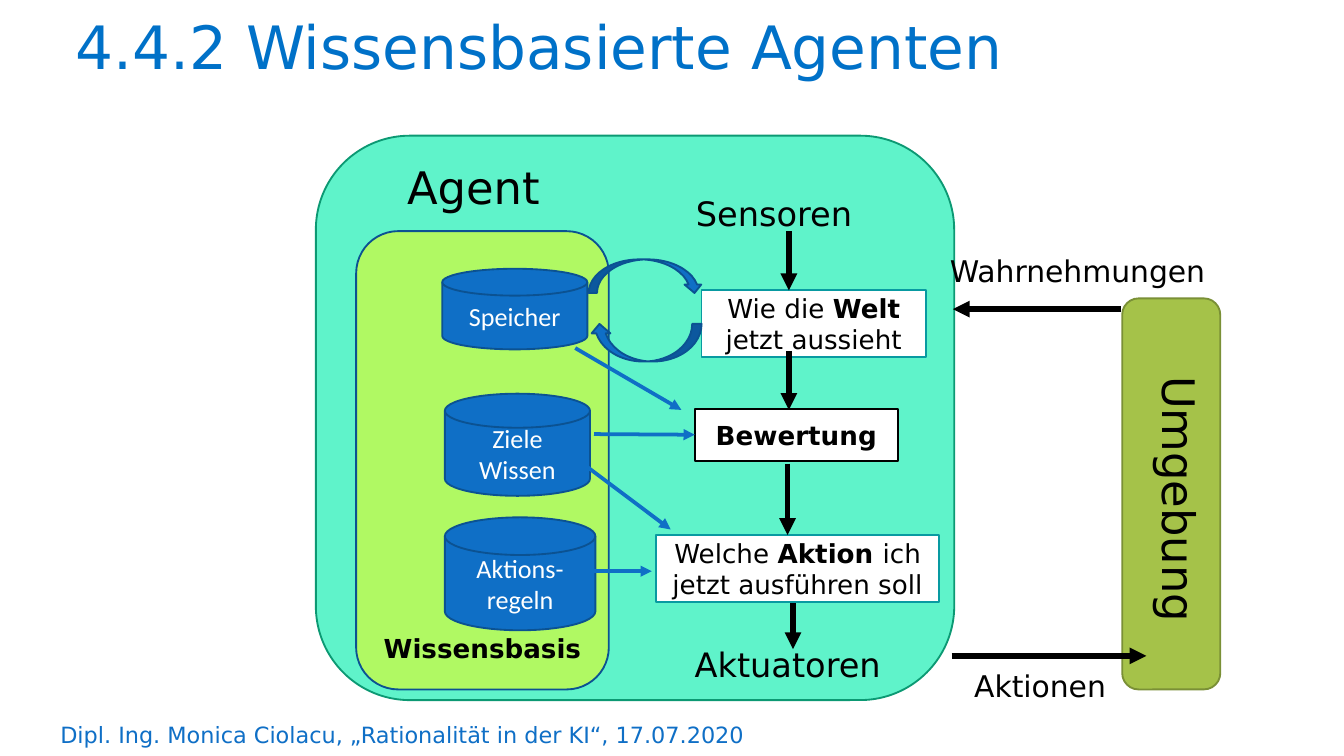
from dataclasses import dataclass

from lxml import etree
from pptx import Presentation
from pptx.dml.color import RGBColor
from pptx.enum.shapes import MSO_CONNECTOR, MSO_SHAPE
from pptx.enum.text import MSO_ANCHOR, PP_ALIGN
from pptx.oxml.ns import qn
from pptx.util import Emu, Pt

PX = 9144  # 100 px to the inch
SLIDE_WIDTH = 1000

STRAIGHT = MSO_CONNECTOR.STRAIGHT
RECT = MSO_SHAPE.RECTANGLE
ROUND = MSO_SHAPE.ROUNDED_RECTANGLE
DISK = MSO_SHAPE.FLOWCHART_MAGNETIC_DISK
CURVED = MSO_SHAPE.CURVED_DOWN_ARROW
CENTER = PP_ALIGN.CENTER
MIDDLE = MSO_ANCHOR.MIDDLE
BOTTOM = MSO_ANCHOR.BOTTOM
LEFT_SIDE = 1

BLACK = RGBColor(0x00, 0x00, 0x00)
WHITE = RGBColor(0xFF, 0xFF, 0xFF)
TITLE_BLUE = RGBColor(0x00, 0x71, 0xC8)
BLUE = RGBColor(0x0F, 0x6F, 0xC6)
DARK_BLUE = RGBColor(0x0B, 0x52, 0x92)
MINT = RGBColor(0x5F, 0xF3, 0xCA)
DARK_MINT = RGBColor(0x0C, 0x99, 0x73)
YELLOW = RGBColor(0xFF, 0xFF, 0x00)
OLIVE = RGBColor(0xA5, 0xC2, 0x49)
DARK_OLIVE = RGBColor(0x7A, 0x90, 0x36)
TEAL = RGBColor(0x08, 0x9A, 0xA1)

SANS = "DejaVu Sans"
DISK_FONT = "Calibri"


@dataclass(frozen=True)
class Node:
    """A filled shape; words between asterisks are bold."""
    box: tuple[int, int, int, int]
    kind: int
    fill: RGBColor
    line: RGBColor
    text: str = ""
    color: RGBColor = BLACK
    font: str = SANS
    anchor: MSO_ANCHOR = MIDDLE
    rotation: int = 0
    opacity: int = 100


@dataclass(frozen=True)
class Label:
    box: tuple[int, int, int, int]
    text: str
    size: int
    color: RGBColor = BLACK
    wrap: bool = True
    vertical: bool = False


@dataclass(frozen=True)
class Arrow:
    start: tuple[int, int]
    end: tuple[int, int]
    color: RGBColor = BLACK
    width: int = 3


def disk(box: tuple[int, int, int, int], text: str) -> Node:
    return Node(box, DISK, BLUE, DARK_BLUE, text, WHITE, DISK_FONT)


def curved(box: tuple[int, int, int, int], rotation: int) -> Node:
    return Node(box, CURVED, BLUE, DARK_BLUE, rotation=rotation)


KNOWLEDGE = Node((265, 172, 188, 341), ROUND, YELLOW, DARK_BLUE,
                 "*Wissensbasis*", anchor=BOTTOM, opacity=51)
RATING = Node((517, 304, 151, 39), RECT, WHITE, BLACK, "*Bewertung*")

NODES = [
    Node((235, 101, 475, 420), ROUND, MINT, DARK_MINT),
    KNOWLEDGE,
    Node((835, 222, 73, 291), ROUND, OLIVE, DARK_OLIVE),
    Node((522, 216, 167, 50), RECT, WHITE, TEAL, "Wie die *Welt* jetzt aussieht"),
    Node((488, 398, 211, 50), RECT, WHITE, TEAL,
         "Welche *Aktion *ich jetzt ausführen soll"),
    RATING,
    disk((329, 200, 108, 60), "Speicher"),
    disk((331, 293, 108, 76), "Ziele Wissen"),
    disk((331, 385, 112, 84), "Aktions-regeln"),
    curved((438, 193, 85, 25), 0),
    curved((439, 241, 83, 28), 180),
]

TITLE = Label((49, 9, 897, 69), "4.4.2 Wissensbasierte Agenten", 32, TITLE_BLUE)
LABELS = [
    Label((35, 532, 615, 30),
          "Dipl. Ing. Monica Ciolacu, „Rationalität in der KI“, 17.07.2020", 12, BLUE),
    Label((293, 114, 142, 50), "Agent", 24),
    Label((508, 139, 167, 40), "Sensoren", 18),
    Label((507, 474, 211, 40), "Aktuatoren", 18),
    Label((697, 183, 217, 37), "Wahrnehmungen", 16),
    Label((715, 492, 119, 37), "Aktionen", 16, wrap=False),
    Label((842, 270, 61, 193), "Umgebung", 24, wrap=False, vertical=True),
]

GOALS_TO_RATING = Arrow((442, 323), (517, 323), BLUE, 2)
ARROWS = [
    Arrow((587, 172), (587, 216)),
    Arrow((587, 261), (587, 305)),
    Arrow((586, 345), (586, 398)),
    Arrow((590, 449), (590, 483)),
    Arrow((834, 230), (709, 230)),
    Arrow((708, 488), (853, 488)),
    Arrow((428, 259), (507, 305), BLUE, 2),
    Arrow((435, 346), (499, 394), BLUE, 2),
    Arrow((442, 425), (485, 425), BLUE, 2),
]


def px(*lengths: int) -> list[Emu]:
    return [Emu(n * PX) for n in lengths]


def add_node(slide, node: Node):
    sp = slide.shapes.add_shape(node.kind, *px(*node.box))
    sp.shadow.inherit = False
    sp.rotation = node.rotation
    sp.fill.solid()
    sp.fill.fore_color.rgb = node.fill
    if node.opacity < 100:
        color = sp._element.spPr.find(qn("a:solidFill"))[0]
        etree.SubElement(color, qn("a:alpha"), val=str(node.opacity * 1000))
    sp.line.color.rgb = node.line
    sp.line.width = Pt(1)
    if node.text:
        tf = sp.text_frame
        tf.word_wrap = True
        tf.vertical_anchor = node.anchor
        p = tf.paragraphs[0]
        p.alignment = CENTER
        for i, part in enumerate(node.text.split("*")):
            if part:
                r = p.add_run()
                r.text = part
                r.font.name = node.font
                r.font.size = Pt(14)
                r.font.bold = i % 2 == 1
                r.font.color.rgb = node.color
    return sp


def add_label(slide, label: Label):
    sp = slide.shapes.add_textbox(*px(*label.box))
    tf = sp.text_frame
    tf.word_wrap = label.wrap
    if label.vertical:
        tf._txBody.bodyPr.set("vert", "vert")
    tf.text = label.text
    font = tf.paragraphs[0].runs[0].font
    font.name = SANS
    font.size = Pt(label.size)
    font.color.rgb = label.color
    return sp


def add_arrow(slide, arrow: Arrow):
    line = slide.shapes.add_connector(STRAIGHT, *px(*arrow.start, *arrow.end))
    line.line.color.rgb = arrow.color
    line.line.width = Pt(arrow.width)
    etree.SubElement(line.line._get_or_add_ln(), qn("a:tailEnd"), type="triangle")
    etree.SubElement(line._element.spPr, qn("a:effectLst"))
    return line


def main() -> None:
    prs = Presentation()
    prs.slide_width = Emu(SLIDE_WIDTH * PX)
    prs.slide_height = Emu(SLIDE_WIDTH * PX * 9 // 16)
    slide = prs.slides.add_slide(prs.slide_layouts[6])

    shapes = {node: add_node(slide, node) for node in NODES}
    shapes[KNOWLEDGE].text_frame.margin_bottom = px(10)[0]

    tf = add_label(slide, TITLE).text_frame
    tf.margin_left, tf.margin_top, tf.margin_right, tf.margin_bottom = px(7, 4, 7, 4)
    tf.paragraphs[0].line_spacing = 0.9
    for label in LABELS:
        add_label(slide, label)

    for arrow in ARROWS:
        add_arrow(slide, arrow)
    add_arrow(slide, GOALS_TO_RATING).end_connect(shapes[RATING], LEFT_SIDE)

    prs.save("out.pptx")


if __name__ == "__main__":
    main()
